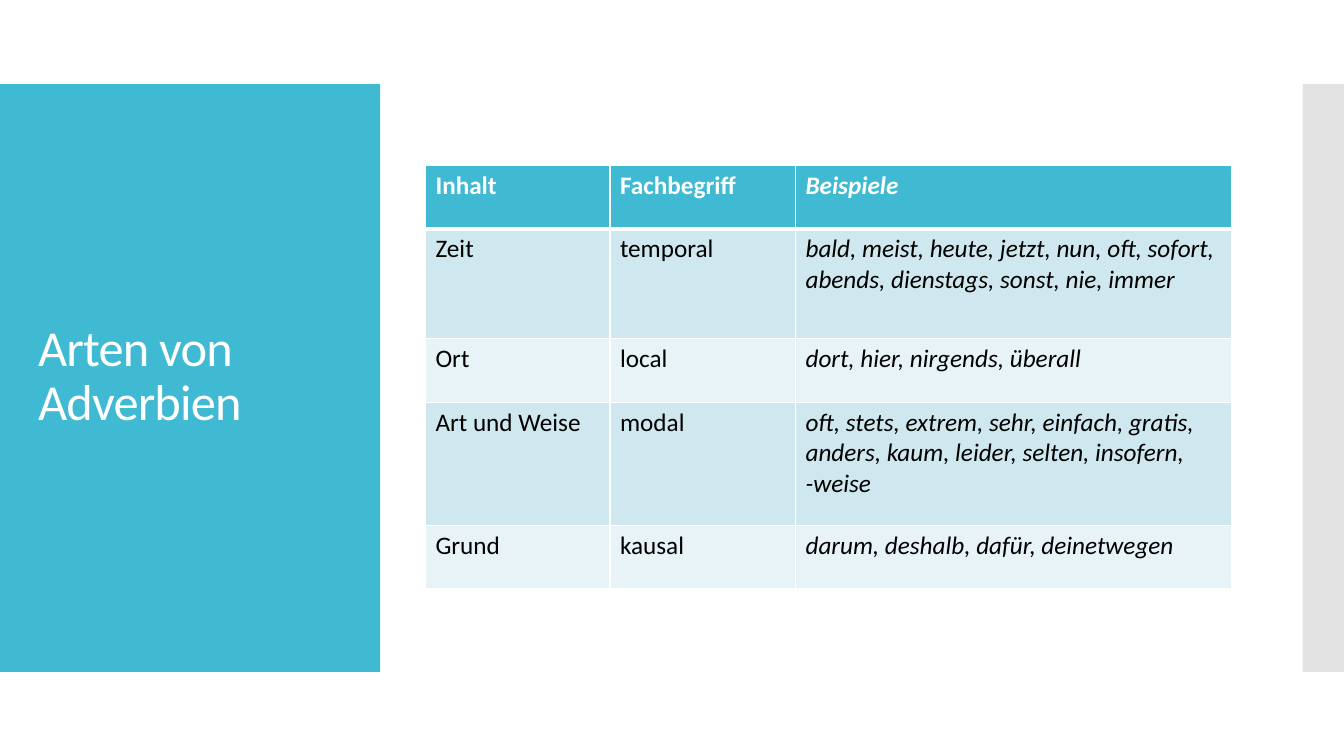
"""Build a slide on the kinds of German adverbs."""
from dataclasses import dataclass

from lxml.etree import SubElement as Sub
from pptx import Presentation
from pptx.dml.color import RGBColor as Rgb
from pptx.enum.shapes import MSO_SHAPE as Form
from pptx.enum.text import MSO_ANCHOR as Anchor
from pptx.oxml.ns import qn
from pptx.util import Inches, Pt

WIDE, HIGH = Inches(13.33), Inches(7.5)
FONT = "Calibri"
HUES = {"teal": "40BAD2", "grey": "C8C8C8", "white": "FFFFFF",
        "black": "000000", "dark": "CFE7EE", "pale": "E8F3F7"}
COLS = (1.83, 1.84, 4.33)
ROWS = (0.63, 1.09, 0.63, 1.22, 0.63)
WORDS = (
    ("Inhalt", "Fachbegriff", "Beispiele"),
    ("Zeit", "temporal", "bald, meist, heute, jetzt, nun, oft, sofort, "
     "abends, dienstags, sonst, nie, immer"),
    ("Ort", "local", "dort, hier, nirgends, überall"),
    ("Art und Weise", "modal", "oft, stets, extrem, sehr, einfach, gratis, "
     "anders, kaum, leider, selten, insofern, -weise"),
    ("Grund", "kausal", "darum, deshalb, dafür, deinetwegen"),
)


@dataclass
class Panel:
    """A full-height side panel, placed by shares of the slide's width."""
    left: float
    width: float
    hue: str
    alpha: int = 100


PANELS = (Panel(0, 0.2828, "teal"), Panel(0.9692, 0.0308, "grey", 50))


def tint(hue: str) -> Rgb:
    """Return the named colour."""
    return Rgb.from_string(HUES[hue])


def style(para, size: int, hue: str, bold: bool = False,
          slant: bool = False) -> None:
    """Set the font of a paragraph."""
    font = para.font
    font.name, font.size = FONT, Pt(size)
    font.bold, font.italic = bold, slant
    font.color.rgb = tint(hue)


def draw_panel(slide, panel: Panel) -> None:
    """Draw one side panel."""
    box = slide.shapes.add_shape(
        Form.RECTANGLE, int(WIDE * panel.left), HIGH // 9,
        int(WIDE * panel.width), HIGH * 7 // 9)
    box.shadow.inherit = False
    box.line.fill.background()
    box.fill.solid()
    box.fill.fore_color.rgb = tint(panel.hue)
    if panel.alpha < 100:
        tone = next(box.element.iter(qn("a:srgbClr")))
        Sub(tone, qn("a:alpha"), val=str(panel.alpha * 1000))


def draw_title(slide, text: str) -> None:
    """Write the title over the teal panel."""
    box = slide.shapes.add_textbox(
        Inches(0.28), Inches(1.23), Inches(3.22), Inches(5.03))
    frame = box.text_frame
    frame.word_wrap = True
    frame.vertical_anchor = Anchor.MIDDLE
    para = frame.paragraphs[0]
    para.text, para.line_spacing = text, 0.9
    style(para, 36, "white")
    next(box.element.iter(qn("a:defRPr"))).set("spc", "-60")


def edge(cell, side: str, width: float) -> None:
    """Draw one white border of a cell."""
    props = cell._tc.get_or_add_tcPr()
    line = Sub(props, qn(f"a:ln{side}"), w=str(Pt(width)))
    Sub(Sub(line, qn("a:solidFill")), qn("a:srgbClr"), val=HUES["white"])


def fill_cell(cell, text: str, row: int, col: int) -> None:
    """Write and colour one table cell."""
    head = row == 0
    for side in "LRTB":
        thick = (head and side == "B") or (row == 1 and side == "T")
        edge(cell, side, 3 if thick else 1)
    cell.fill.solid()
    cell.fill.fore_color.rgb = tint(
        "teal" if head else "dark" if row % 2 else "pale")
    para = cell.text_frame.paragraphs[0]
    para.text = text
    style(para, 18, "white" if head else "black", head, col == 2)


def draw_table(slide) -> None:
    """Draw the table of adverbs."""
    grid = slide.shapes.add_table(
        len(ROWS), len(COLS), Inches(4.22), Inches(1.64),
        Inches(sum(COLS)), Inches(sum(ROWS))).table
    for col, width in zip(grid.columns, COLS):
        col.width = Inches(width)
    for row, height in zip(grid.rows, ROWS):
        row.height = Inches(height)
    for row, line in enumerate(WORDS):
        for col, text in enumerate(line):
            fill_cell(grid.cell(row, col), text, row, col)


def main() -> None:
    """Build and save the slide."""
    deck = Presentation()
    deck.slide_width, deck.slide_height = WIDE, HIGH
    slide = deck.slides.add_slide(deck.slide_layouts[6])
    for panel in PANELS:
        draw_panel(slide, panel)
    draw_title(slide, "Arten von Adverbien")
    draw_table(slide)
    deck.save("out.pptx")


if __name__ == "__main__":
    main()
